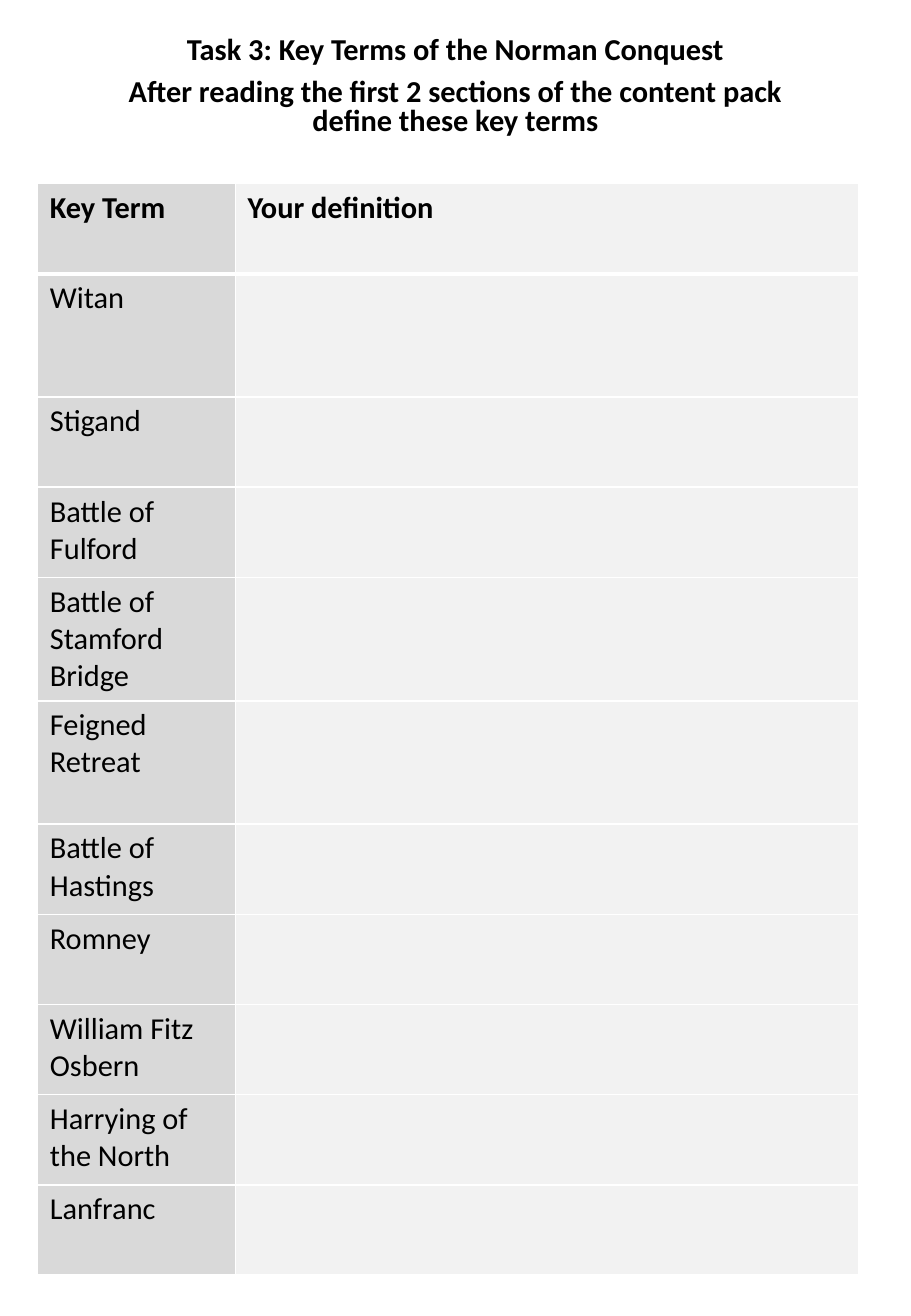
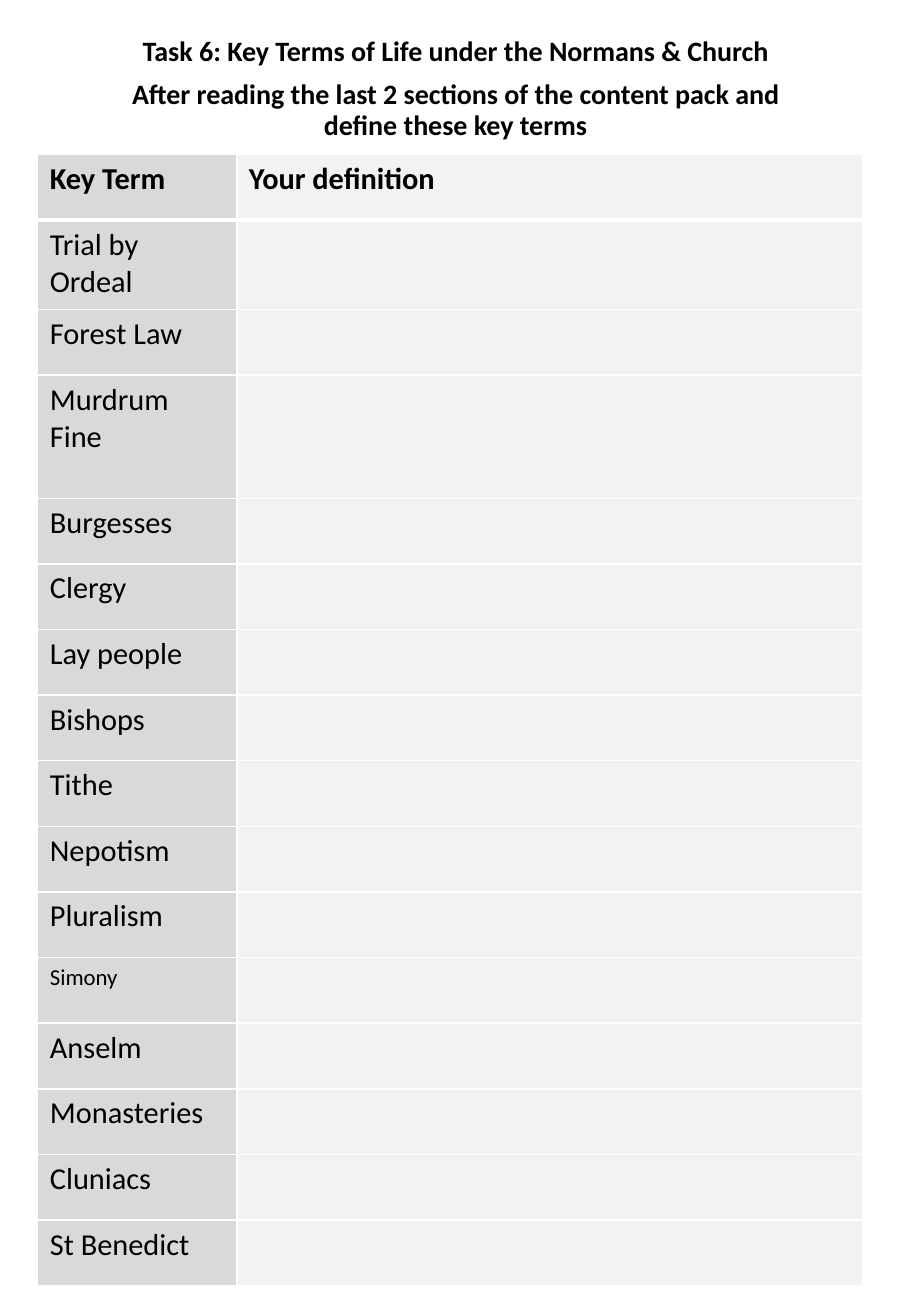
from dataclasses import dataclass

from lxml import etree
from pptx import Presentation
from pptx.dml.color import RGBColor
from pptx.enum import text
from pptx.oxml import ns
from pptx.util import Pt


@dataclass(frozen=True)
class Theme:
    font: str = "Calibri"
    ink: str = "000000"
    term_fill: str = "D9D9D9"
    definition_fill: str = "F2F2F2"
    rule: str = "FFFFFF"
    body_size: float = 18
    thin: float = 1
    thick: float = 3


THEME = Theme()
TITLE_BOX = (67.5, 18.7, 405, 72.7)
TABLE_LEFT = 22.4
HEADINGS = ("Key Term", "Your definition")

# "heights" and "sizes" hold the terms that differ from the sheet's rule.
SHEETS = [
    {
        "title": ("Task 3: Key Terms of the Norman Conquest",
                  "After reading the first 2 sections of the content pack "
                  "define these key terms"),
        "title_size": 18,
        "line_spacing": 0.8,
        "top": 108.8,
        "columns": (117.2, 369.2),
        "row_height": 53.5,
        "heights": {"Witan": 73, "Battle of Stamford Bridge": 73,
                    "Feigned Retreat": 73},
        "sizes": {},
        "terms": ("Witan", "Stigand", "Battle of Fulford",
                  "Battle of Stamford Bridge", "Feigned Retreat",
                  "Battle of Hastings", "Romney", "William Fitz Osbern",
                  "Harrying of the North", "Lanfranc"),
    },
    {
        "title": ("Task 6: Key Terms of Life under the Normans & Church",
                  "After reading the last 2 sections of the content pack and "
                  "define these key terms"),
        "title_size": 16.6,
        "line_spacing": 0.9,
        "top": 91.6,
        "columns": (118, 371),
        "row_height": 38.9,
        "heights": {"Trial by Ordeal": 53, "Murdrum Fine": 73},
        "sizes": {"Simony": 13.5},
        "terms": ("Trial by Ordeal", "Forest Law", "Murdrum Fine", "Burgesses",
                  "Clergy", "Lay people", "Bishops", "Tithe", "Nepotism",
                  "Pluralism", "Simony", "Anselm", "Monasteries", "Cluniacs",
                  "St Benedict"),
    },
]


def write(paragraph, wording, size, bold):
    run = paragraph.add_run()
    run.text = wording
    style = {"name": THEME.font, "size": Pt(size), "bold": bold}
    for attribute, value in style.items():
        setattr(run.font, attribute, value)
    run.font.color.rgb = RGBColor.from_string(THEME.ink)


def add_title(slide, sheet):
    title = slide.shapes.title
    title.left, title.top, title.width, title.height = map(Pt, TITLE_BOX)
    frame = title.text_frame
    layout = {"word_wrap": True, "auto_size": text.MSO_AUTO_SIZE.NONE,
              "vertical_anchor": text.MSO_ANCHOR.TOP}
    for attribute, value in layout.items():
        setattr(frame, attribute, value)
    spacing = {"alignment": text.PP_ALIGN.CENTER, "space_before": Pt(7.5),
               "line_spacing": sheet["line_spacing"]}
    for index, wording in enumerate(sheet["title"]):
        paragraph = frame.add_paragraph() if index else frame.paragraphs[0]
        for attribute, value in spacing.items():
            setattr(paragraph, attribute, value)
        write(paragraph, wording, sheet["title_size"], True)


def rule_cell(cell, top, bottom):
    """Draw the cell's four borders; the sides are always thin."""
    properties = cell._tc.get_or_add_tcPr()
    widths = {"L": THEME.thin, "R": THEME.thin, "T": top, "B": bottom}
    for side, width in widths.items():
        line = etree.SubElement(properties, ns.qn(f"a:ln{side}"), w=str(Pt(width)))
        fill = etree.SubElement(line, ns.qn("a:solidFill"))
        etree.SubElement(fill, ns.qn("a:srgbClr"), val=THEME.rule)


def add_terms_table(slide, sheet):
    rows = [HEADINGS] + [(term, "") for term in sheet["terms"]]
    heights = [sheet["heights"].get(term, sheet["row_height"]) for term, _ in rows]
    table = slide.shapes.add_table(
        len(rows), len(HEADINGS), Pt(TABLE_LEFT), Pt(sheet["top"]),
        Pt(sum(sheet["columns"])), Pt(sum(heights))).table
    table.horz_banding = False
    for column, width in zip(table.columns, sheet["columns"]):
        column.width = Pt(width)

    fills = (THEME.term_fill, THEME.definition_fill)
    for index, (wordings, height) in enumerate(zip(rows, heights)):
        table.rows[index].height = Pt(height)
        top = THEME.thick if index == 1 else THEME.thin
        bottom = THEME.thick if index == 0 else THEME.thin
        for cell, wording, fill in zip(table.rows[index].cells, wordings, fills):
            rule_cell(cell, top, bottom)
            cell.fill.solid()
            cell.fill.fore_color.rgb = RGBColor.from_string(fill)
            if wording:
                size = sheet["sizes"].get(wording, THEME.body_size)
                write(cell.text_frame.paragraphs[0], wording, size, index == 0)


def main():
    deck = Presentation()
    deck.slide_width, deck.slide_height = Pt(540), Pt(780)
    title_only = deck.slide_layouts.get_by_name("Title Only")
    for sheet in SHEETS:
        slide = deck.slides.add_slide(title_only)
        add_title(slide, sheet)
        add_terms_table(slide, sheet)
    deck.save("out.pptx")


if __name__ == "__main__":
    main()
